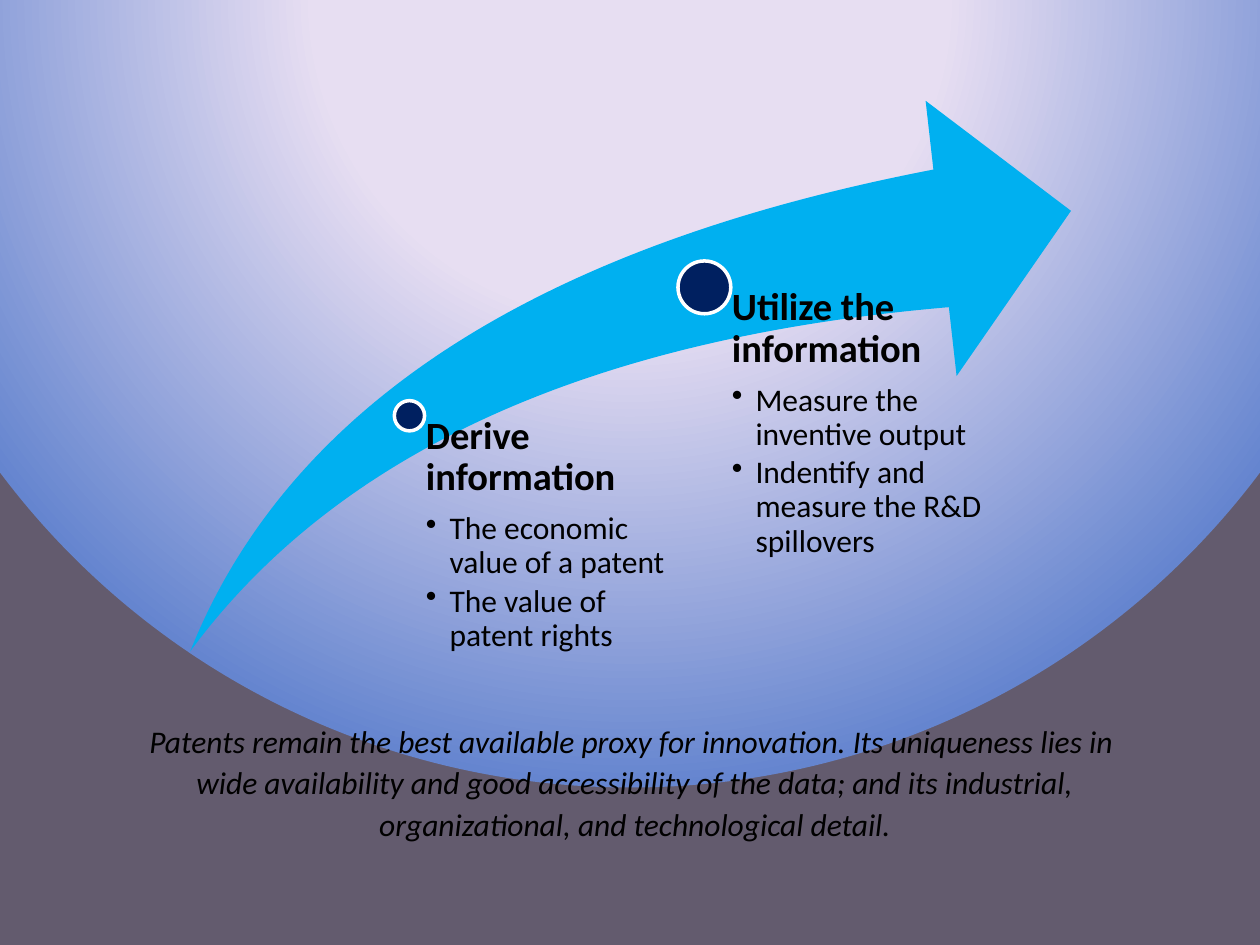
from lxml.etree import SubElement
from pptx import Presentation
from pptx.dml.color import RGBColor
from pptx.enum.shapes import MSO_SHAPE
from pptx.enum.text import PP_ALIGN
from pptx.oxml import parse_xml
from pptx.oxml.ns import nsdecls, qn
from pptx.util import Pt

FONT = "Calibri"
COLORS = {
    "arrow": "00B0F0", "dot": "002060", "outline": "FFFFFF", "text": "000000",
    "glow": "E7DEF2", "rim": "6585CF", "edge": "635B6E",
}
STEPS = [
    (234, 237.6, 17.3, 9.4, 134, "Derive information",
     ["The economic value of a patent", "The value of patent rights"]),
    (402.5, 164.2, 30.2, 15.8, 208, "Utilize the information",
     ["Measure the inventive output", "Indentify and measure the R&D spillovers"]),
]
SUMMARY = [
    "Patents remain the best available proxy for innovation. Its uniqueness lies in ",
    "wide availability and good accessibility of the data; and its industrial, "
    "organizational, and technological detail.",
]


def color(name):
    """Return the named colour."""
    return RGBColor.from_string(COLORS[name])


def set_background(s):
    """Fill the slide with a circular gradient centred above its top edge."""
    s.background.fill.solid()
    bg_pr = s.background._cSld.find(".//" + qn("p:bgPr"))
    stops = "".join(
        f'<a:gs pos="{pos}"><a:srgbClr val="{COLORS[name]}"/></a:gs>'
        for pos, name in [(40000, "glow"), (100000, "rim"), (100000, "edge")]
    )
    gradient = parse_xml(
        f'<a:gradFill {nsdecls("a")} rotWithShape="1"><a:gsLst>{stops}</a:gsLst>'
        '<a:path path="circle"><a:fillToRect l="50000" t="-80000" r="50000" b="180000"/>'
        "</a:path></a:gradFill>"
    )
    bg_pr.replace(bg_pr[0], gradient)


def add_shape(s, kind, x, y, w, h, fill, line=None):
    """Add a flat preset shape with an optional outline."""
    sp = s.shapes.add_shape(kind, Pt(x), Pt(y), Pt(w), Pt(h))
    sp.shadow.inherit = False
    sp.fill.solid()
    sp.fill.fore_color.rgb = color(fill)
    if line:
        sp.line.color.rgb = color(line)
        sp.line.width = Pt(2)
    else:
        sp.line.fill.background()
    return sp


def add_text_frame(s, x, y, w, h, insets=None):
    """Add a wrapping text box and return its text frame."""
    tf = s.shapes.add_textbox(Pt(x), Pt(y), Pt(w), Pt(h)).text_frame
    tf.word_wrap = True
    if insets:
        tf.margin_left, tf.margin_top, tf.margin_right, tf.margin_bottom = map(Pt, insets)
    return tf


def write(p, text, size=18, bold=False, italic=False, align=PP_ALIGN.LEFT,
          spacing=0.9, after=0, margin=0, indent=0, bullet=None):
    """Write one formatted paragraph."""
    p.alignment = align
    p.line_spacing = spacing
    p.space_after = Pt(after)
    p_pr = p._p.get_or_add_pPr()
    p_pr.set("marL", str(Pt(margin)))
    p_pr.set("indent", str(Pt(indent)))
    if bullet:
        SubElement(p_pr, qn("a:buChar")).set("char", bullet)
    r = p.add_run()
    r.text = text
    r.font.name = FONT
    r.font.size = Pt(size)
    r.font.bold = bold
    r.font.italic = italic
    r.font.color.rgb = color("text")


def add_step(s, x, y, d, inset, h, title, points):
    """Add a dot centred on x, y with its heading and bullets below right."""
    add_shape(s, MSO_SHAPE.OVAL, x - d / 2, y - d / 2, d, d, "dot", "outline")
    tf = add_text_frame(s, x, y, 163.5, h, (inset, 0, 0, 0))
    write(tf.paragraphs[0], title, size=22, bold=True, after=7.7)
    for point in points:
        write(tf.add_paragraph(), point, after=2.7, margin=13.5, indent=-13.5, bullet="•")


def add_summary(s):
    """Add the centred closing statement."""
    tf = add_text_frame(s, 54, 406.8, 617.8, 79.2)
    style = {"italic": True, "align": PP_ALIGN.CENTER, "spacing": 1.1}
    first, second = SUMMARY
    write(tf.paragraphs[0], first, margin=36, indent=-36, **style)
    write(tf.add_paragraph(), second, **style)


def main():
    """Build the slide and save it."""
    prs = Presentation()
    prs.slide_width, prs.slide_height = Pt(720), Pt(540)
    s = prs.slides.add_slide(prs.slide_layouts[6])
    set_background(s)
    arrow = add_shape(s, MSO_SHAPE.SWOOSH_ARROW, 108.7, 57.6, 503.3, 314.6, "arrow")
    arrow.adjustments[0] = arrow.adjustments[1] = 0.25
    for step in STEPS:
        add_step(s, *step)
    add_summary(s)
    prs.save("out.pptx")


if __name__ == "__main__":
    main()
